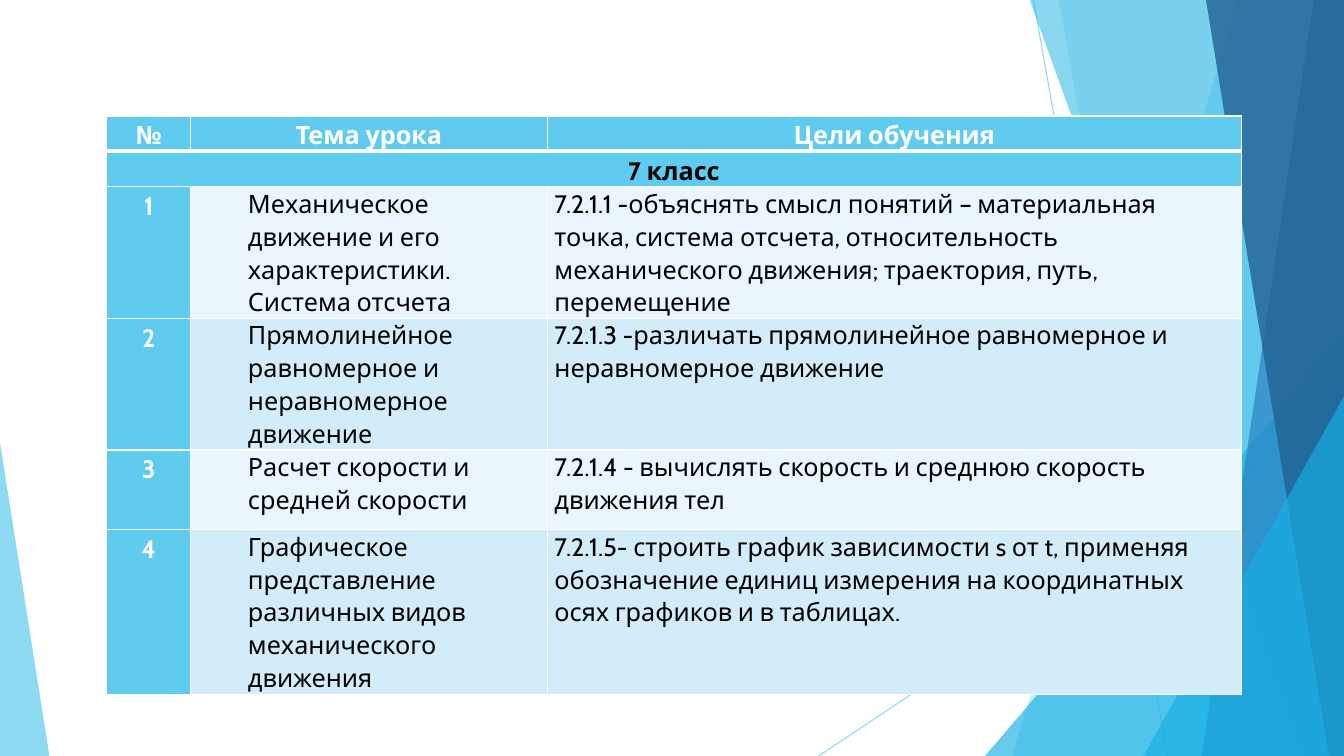
from dataclasses import dataclass
from lxml import etree
from pptx import Presentation
from pptx.dml.color import RGBColor
from pptx.enum.shapes import MSO_CONNECTOR, MSO_SHAPE
from pptx.enum.text import PP_ALIGN
from pptx.oxml.ns import qn
from pptx.util import Inches, Pt

LINE = MSO_CONNECTOR.STRAIGHT
WEDGE = MSO_SHAPE.ISOSCELES_TRIANGLE
LEFT, CENTER = PP_ALIGN.LEFT, PP_ALIGN.CENTER


@dataclass(frozen=True)
class Theme:
    font: str = "Cabin"
    size: int = 18
    sky: str = "5FCBEF"
    aqua: str = "17B0E4"
    blue: str = "2E83C3"
    navy: str = "226292"
    pale: str = "EAF6FC"
    tint: str = "D2ECF9"
    white: str = "FFFFFF"
    black: str = "000000"


theme = Theme()
WIDTH, HEIGHT = 13.33, 7.5


def fade(shape, alpha):
    """Set the opacity of a shape's colour, in percent."""
    for color in shape._element.iter(qn("a:srgbClr")):
        etree.SubElement(color, qn("a:alpha")).set("val", str(alpha * 1000))


def edge(cell, side, points):
    """Draw one white border of a table cell."""
    line = etree.SubElement(cell._tc.get_or_add_tcPr(), qn("a:ln" + side))
    line.set("w", str(Pt(points)))
    fill = etree.SubElement(line, qn("a:solidFill"))
    etree.SubElement(fill, qn("a:srgbClr")).set("val", theme.white)


deck = Presentation()
deck.slide_width, deck.slide_height = Inches(WIDTH), Inches(HEIGHT)
slide = deck.slides.add_slide(deck.slide_layouts[6])
shapes = slide.shapes

# Thin lines behind the panels
for ends in [(10.25, 0, 11.58, 7.5), (13.33, 4.03, 8.12, 7.5)]:
    line = shapes.add_connector(LINE, *[Inches(end) for end in ends])
    line.line.color.rgb = RGBColor.from_string(theme.sky)
    line.line.width = Pt(0.75)
    etree.SubElement(line._element.spPr, qn("a:effectLst"))
    fade(line, 70)

# Panels reach the right edge: (top x, bottom x)
# Wedges stand on the bottom edge: (left, top, width, apex)
decor = [
    ((12.28, 10.04), theme.sky, 36),
    ((10.5, 11.83), theme.sky, 20),
    ((9.77, 3.33, 3.56, 1), theme.aqua, 66),
    ((10.21, 12.91), theme.aqua, 50),
    ((13.03, 11.92), theme.blue, 70),
    ((11.96, 13.18), theme.navy, 80),
    ((11.34, 3.93, 1.99, 1), theme.aqua, 66),
    ((0, 4.39, 0.49, 0), theme.sky, 70),
]
for place, color, alpha in decor:
    if len(place) == 2:
        top, base = place
        points = [(WIDTH, -0.01), (WIDTH, HEIGHT), (base, HEIGHT)]
        pen = shapes.build_freeform(Inches(top), Inches(-0.01))
        pen.add_line_segments([(Inches(x), Inches(y)) for x, y in points])
        shape = pen.convert_to_shape()
    else:
        left, top, width, apex = place
        shape = shapes.add_shape(WEDGE, Inches(left), Inches(top),
                                 Inches(width), Inches(HEIGHT - top))
        shape.adjustments[0] = apex
    shape.shadow.inherit = False
    shape.fill.solid()
    shape.fill.fore_color.rgb = RGBColor.from_string(color)
    shape.line.fill.background()
    fade(shape, alpha)

# Lesson table
rows = [
    ("№", "Тема урока", "Цели обучения"),
    ("7 класс", "", ""),
    ("1", "Механическое движение и его характеристики. Система отсчета",
     "7.2.1.1 -объяснять смысл понятий – материальная точка, система отсчета, "
     "относительность механического движения; траектория, путь, перемещение"),
    ("2", "Прямолинейное равномерное и неравномерное движение",
     "7.2.1.3 -различать прямолинейное равномерное и неравномерное движение"),
    ("3", "Расчет скорости и средней скорости",
     "7.2.1.4 - вычислять скорость и среднюю скорость движения тел"),
    ("4", "Графическое представление различных видов механического движения",
     "7.2.1.5- строить график зависимости s от t, применяя обозначение единиц "
     "измерения на координатных осях графиков и в таблицах."),
]
widths = [0.83, 3.54, 6.88]
heights = [0.28, 0.28, 1.06, 1.06, 0.79, 1.6]
table = shapes.add_table(len(rows), len(widths), Inches(1.06), Inches(1.15),
                         Inches(sum(widths)), Inches(sum(heights))).table
table.horz_banding = False
for col, width in zip(table.columns, widths):
    col.width = Inches(width)
for row, height in zip(table.rows, heights):
    row.height = Inches(height)
table.cell(1, 0).merge(table.cell(1, 2))

for r, row in enumerate(rows):
    for c, text in enumerate(row):
        cell = table.cell(r, c)
        head = r < 2 or c == 0
        band = theme.tint if r % 2 else theme.pale

        # Borders and fill, with a thick rule under the header
        for side in "LRTB":
            edge(cell, side, 3 if (r, side) in [(0, "B"), (1, "T")] else 1)
        cell.fill.solid()
        cell.fill.fore_color.rgb = RGBColor.from_string(
            theme.sky if head else band)

        # Topics are set in from the left
        cell.margin_left = Inches(0.57 if c == 1 and not head else 0.07)
        cell.margin_right = Inches(0.07)
        cell.margin_top = cell.margin_bottom = 0

        para = cell.text_frame.paragraphs[0]
        para.text = text
        para.alignment = CENTER if head else LEFT
        para.line_spacing = 1.15 if head else 1.07
        para.space_after = Pt(8)
        font = para.font
        font.name, font.size, font.bold = theme.font, Pt(theme.size), head
        font.color.rgb = RGBColor.from_string(
            theme.white if head and r != 1 else theme.black)
        for run in para.runs:
            run.font.name, run.font.size = theme.font, Pt(theme.size)
            run.font.bold = head
            run.font.color.rgb = font.color.rgb

deck.save("out.pptx")
